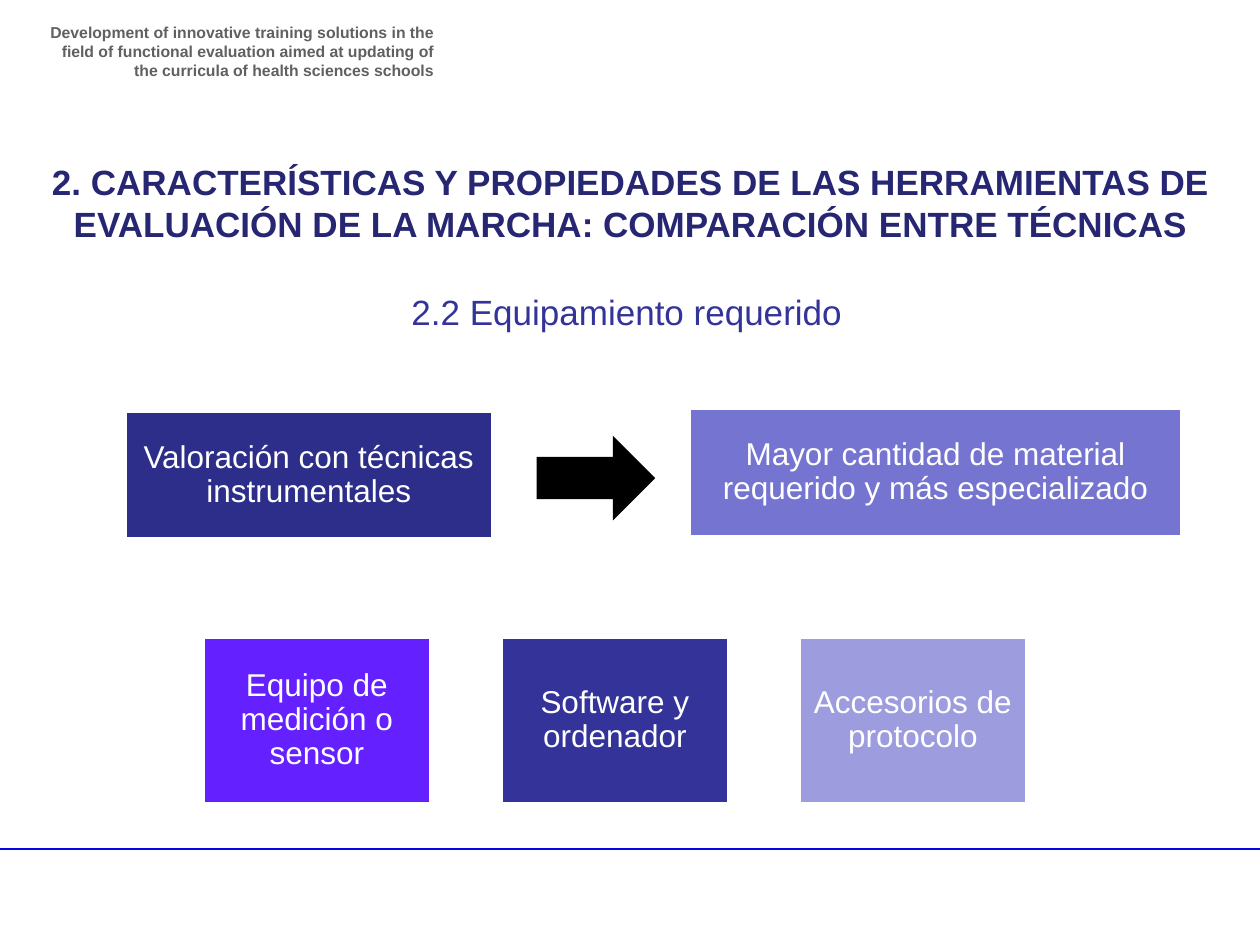
"""Build the slide on the equipment that gait assessment requires."""
from lxml.etree import SubElement
from pptx import Presentation
from pptx.dml.color import RGBColor
from pptx.enum.shapes import MSO_CONNECTOR, MSO_SHAPE
from pptx.enum.text import MSO_ANCHOR, PP_ALIGN
from pptx.oxml.ns import qn
from pptx.util import Inches, Pt

COLORS = {
    "rule": "0404E6", "header": "606060", "title": "262673", "subtitle": "333399",
    "assessment": "2D2D8A", "material": "7575D1", "sensor": "6520FF",
    "software": "333399", "accessories": "9C9CDF", "arrow": "000000", "white": "FFFFFF",
}


def write_text(holder, text, size=18, color="white", bold=False,
               align=PP_ALIGN.CENTER, anchor=MSO_ANCHOR.TOP, spacing=1.0, inset=None):
    frame = holder.text_frame
    frame.word_wrap = True
    frame.vertical_anchor = anchor
    if inset is not None:
        frame.margin_left = frame.margin_right = Inches(inset)
        frame.margin_top = frame.margin_bottom = Inches(inset)
    paragraph = frame.paragraphs[0]
    paragraph.alignment = align
    paragraph.line_spacing = spacing
    paragraph.space_before = Pt(0)
    run = paragraph.add_run()
    run.text = text
    run.font.name = "Arial"
    run.font.size = Pt(size)
    run.font.bold = bold
    run.font.color.rgb = RGBColor.from_string(COLORS[color])


deck = Presentation()
deck.slide_width, deck.slide_height = Inches(10), Inches(7.5)
slide = deck.slides.add_slide(deck.slide_layouts[5])
shapes = slide.shapes

footer_rule = shapes.add_connector(
    MSO_CONNECTOR.STRAIGHT, Inches(-0.05), Inches(6.74), Inches(10), Inches(6.74))
footer_rule.line.color.rgb = RGBColor.from_string(COLORS["rule"])
footer_rule.line.width = Pt(1)
SubElement(footer_rule._element.spPr, qn("a:effectLst"))

header = shapes.add_textbox(Inches(0.28), Inches(0.13), Inches(3.26), Inches(0.47))
write_text(header, "Development of innovative training solutions in the ﬁeld of functional "
           "evaluation aimed at updating of the curricula of health sciences schools",
           size=9, color="header", bold=True, align=PP_ALIGN.RIGHT)

title = shapes.title
title.left, title.top, title.width, title.height = map(Inches, (0.28, 1.22, 9.45, 0.77))
write_text(title, "2. CARACTERÍSTICAS Y PROPIEDADES DE LAS HERRAMIENTAS DE EVALUACIÓN "
           "DE LA MARCHA: COMPARACIÓN ENTRE TÉCNICAS", size=20, color="title", bold=True)

subtitle = shapes.add_textbox(Inches(3.14), Inches(2.26), Inches(3.67), Inches(0.44))
write_text(subtitle, "2.2 Equipamiento requerido", size=20, color="subtitle")

boxes = [
    ("Valoración con técnicas instrumentales", "assessment", 0.99, 3.26, 2.92, 1.02),
    ("Mayor cantidad de material requerido y más especializado", "material",
     5.47, 3.24, 3.91, 1.02),
]
equipment = [
    ("Equipo de medición o sensor", "sensor"),
    ("Software y ordenador", "software"),
    ("Accesorios de protocolo", "accessories"),
]
for column, (label, color) in enumerate(equipment):
    boxes.append((label, color, 1.61 + 2.365 * column, 5.06, 1.81, 1.32))

for label, color, *place in boxes:
    box = shapes.add_shape(MSO_SHAPE.RECTANGLE, *map(Inches, place))
    box.shadow.inherit = False
    box.fill.solid()
    box.fill.fore_color.rgb = RGBColor.from_string(COLORS[color])
    box.line.color.rgb = RGBColor.from_string(COLORS["white"])
    box.line.width = Pt(2)
    write_text(box, label, anchor=MSO_ANCHOR.MIDDLE, spacing=0.9, inset=0.01)

arrow = shapes.add_shape(
    MSO_SHAPE.RIGHT_ARROW, Inches(4.26), Inches(3.46), Inches(0.94), Inches(0.67))
arrow.shadow.inherit = False
arrow.fill.solid()
arrow.fill.fore_color.rgb = RGBColor.from_string(COLORS["arrow"])
arrow.line.fill.background()

deck.save("out.pptx")
